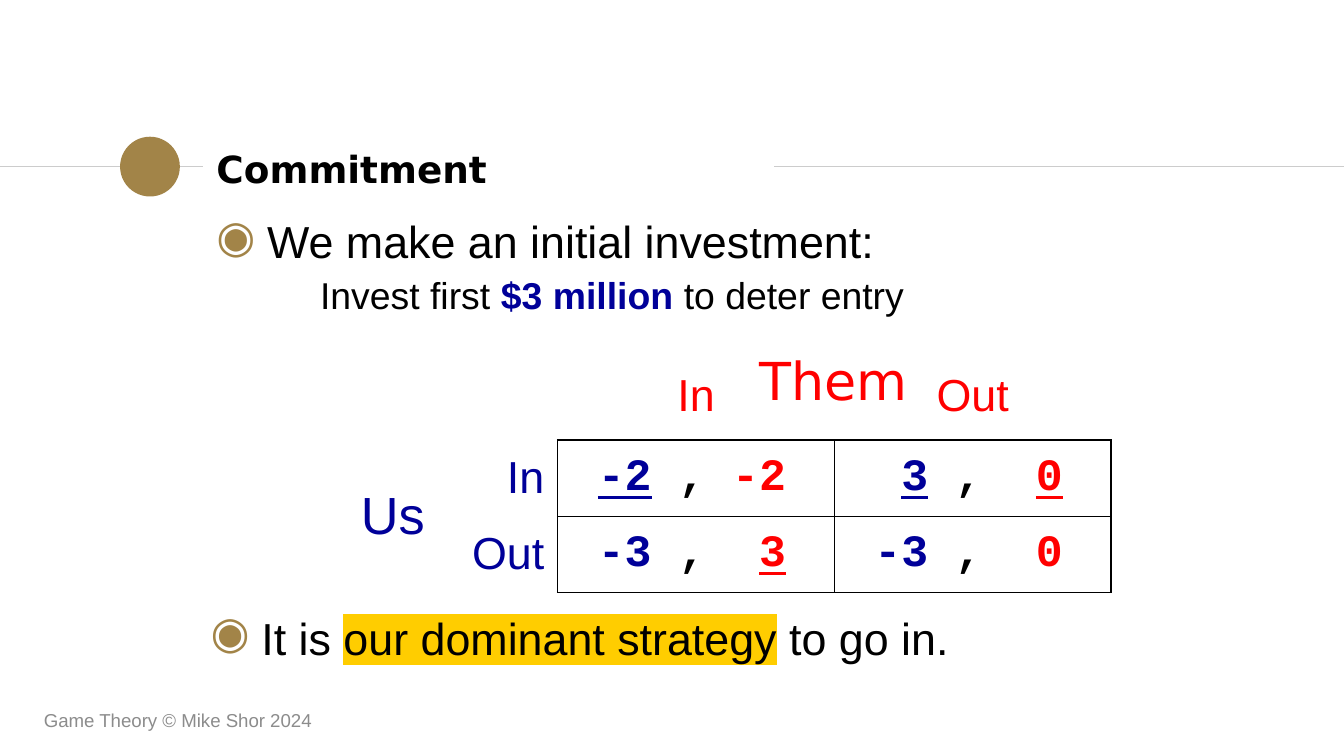
from collections import namedtuple

from lxml.etree import SubElement
from pptx import Presentation
from pptx.dml.color import RGBColor
from pptx.enum.shapes import MSO_CONNECTOR as Connector, MSO_SHAPE as Shape
from pptx.enum.text import MSO_ANCHOR as Anchor, PP_ALIGN as Align
from pptx.oxml.ns import qn
from pptx.util import Cm, Pt

Box = namedtuple("Box", "left top width height")

COLORS = {
    "text": "000000",
    "us": "000099",
    "them": "FF0000",
    "accent": "A28448",
    "rule": "CCCCCC",
    "footer": "8C8C8C",
    "mark": "FFCD00",
}
BODY, HEADING, PAYOFF = "Arial", "DejaVu Sans", "Courier New"


def rgb(name):
    return RGBColor.from_string(COLORS[name])


def add_color(parent, name):
    fill = SubElement(parent, qn("a:solidFill"))
    SubElement(fill, qn("a:srgbClr"), val=COLORS[name])


def add_span(para, text, size, color="text", face=BODY, bold=False, underline=False, mark=None):
    span = para.add_run()
    span.text = text
    font = span.font
    font.size, font.bold, font.underline = Pt(size), bold, underline
    font.color.rgb = rgb(color)
    font.name = face
    if mark:
        props = span._r.get_or_add_rPr()
        highlight = SubElement(props, qn("a:highlight"))
        SubElement(highlight, qn("a:srgbClr"), val=COLORS[mark])
        props.find(qn("a:latin")).addprevious(highlight)


def set_frame(frame, inset_x=0.25, inset_y=0.25, anchor=Anchor.TOP):
    frame.word_wrap = True
    frame.margin_left = frame.margin_right = Cm(inset_x)
    frame.margin_top = frame.margin_bottom = Cm(inset_y)
    frame.vertical_anchor = anchor
    return frame.paragraphs[0]


def add_text(page, box, **frame_options):
    shape = page.shapes.add_textbox(*map(Cm, box))
    return shape.text_frame, set_frame(shape.text_frame, **frame_options)


def set_bullet(para):
    para.line_spacing = 0.9
    props = para._p.get_or_add_pPr()
    props.set("marL", str(Cm(0.96)))
    props.set("indent", str(-Cm(0.96)))
    color = SubElement(props, qn("a:buClr"))
    SubElement(color, qn("a:srgbClr"), val=COLORS["accent"])
    SubElement(props, qn("a:buChar"), char="◉")


def draw_title(page, box):
    middle = box.top + box.height / 2 - 0.03
    diameter = 1.13
    for start, end in ((0, box.left), (box.left + 10.79, 25.4)):
        rule = page.shapes.add_connector(
            Connector.STRAIGHT, Cm(start), Cm(middle), Cm(end), Cm(middle))
        rule.line.color.rgb = rgb("rule")
        rule.line.width = Pt(0.75)
        SubElement(rule._element.spPr, qn("a:effectLst"))
    dot = page.shapes.add_shape(
        Shape.OVAL, Cm(box.left - 1.57), Cm(middle - diameter / 2), Cm(diameter), Cm(diameter))
    dot.shadow.inherit = False
    dot.fill.solid()
    dot.fill.fore_color.rgb = rgb("accent")
    dot.line.fill.background()

    title = page.shapes.title
    title.left, title.top, title.width, title.height = map(Cm, box)
    para = set_frame(title.text_frame, anchor=Anchor.MIDDLE)
    para.alignment = Align.LEFT
    add_span(para, "Commitment", 20, face=HEADING, bold=True)


def draw_investment(page, box):
    frame, para = add_text(page, box)
    set_bullet(para)
    add_span(para, "We make an initial investment:", 24)
    para = frame.add_paragraph()
    para.line_spacing, para.space_before = 0.9, Pt(4.8)
    para._p.get_or_add_pPr().set("marL", str(Cm(1.96)))
    add_span(para, "Invest first ", 20)
    add_span(para, "$3 million ", 20, "us", bold=True)
    add_span(para, "to deter entry", 20)


def draw_conclusion(page, box):
    _, para = add_text(page, box)
    set_bullet(para)
    add_span(para, "It is ", 24)
    add_span(para, "our dominant strategy", 24, mark="mark")
    add_span(para, " to go in.", 24)


def draw_footer(page, box):
    _, para = add_text(page, box, inset_y=0.13, anchor=Anchor.MIDDLE)
    add_span(para, "Game Theory © Mike Shor 2024", 10, "footer")


def set_borders(cell, visible):
    props = cell._tc.get_or_add_tcPr()
    for side in "LRTB":
        line = SubElement(props, qn(f"a:ln{side}"), w=str(Pt(1)))
        if side in visible:
            add_color(line, "text")
        else:
            SubElement(line, qn("a:noFill"))
    cell.fill.background()


def write_label(cell, text, size, color, align, anchor=Anchor.MIDDLE):
    cell.vertical_anchor = anchor
    para = cell.text_frame.paragraphs[0]
    para.alignment = align
    add_span(para, text, size, color)


def write_payoff(cell, ours, theirs, our_best, their_best):
    cell.vertical_anchor = Anchor.MIDDLE
    para = cell.text_frame.paragraphs[0]
    tabs = SubElement(para._p.get_or_add_pPr(), qn("a:tabLst"))
    for place, align in ((1.52, "r"), (2.03, "l"), (4.06, "r")):
        SubElement(tabs, qn("a:tab"), pos=str(Cm(place)), algn=align)
    style = {"face": PAYOFF, "bold": True}
    add_span(para, "\t", 24, **style)
    add_span(para, str(ours), 24, "us", underline=our_best, **style)
    add_span(para, "\t,\t", 24, **style)
    add_span(para, str(theirs), 24, "them", underline=their_best, **style)


def draw_game(page, box):
    _, para = add_text(page, Box(box.left + 6.42, box.top - 0.43, 6.93, 1.45), inset_y=0.13)
    para.alignment = Align.CENTER
    add_span(para, "Them", 28, "them", HEADING)

    grid = page.shapes.add_table(3, 4, *map(Cm, box)).table
    grid.first_row = grid.horz_banding = False
    for column, width in zip(grid.columns, (2.41, 2.26, 5.23, 5.23)):
        column.width = Cm(width)
    for row in grid.rows:
        row.height = Cm(box.height / 3)
    for r in range(3):
        for c in range(4):
            if c > 1:
                visible = "LRTB" if r else "B"
            else:
                visible = "R" if r and c else ""
            set_borders(grid.cell(r, c), visible)

    grid.cell(1, 0).merge(grid.cell(2, 0))
    write_label(grid.cell(1, 0), "Us", 28, "us", Align.RIGHT)
    for i, move in enumerate(("In", "Out")):
        write_label(grid.cell(0, i + 2), move, 24, "them", Align.CENTER, Anchor.TOP)
        write_label(grid.cell(i + 1, 1), move, 24, "us", Align.RIGHT)

    payoffs = [
        [(-2, -2, True, False), (3, 0, True, True)],
        [(-3, 3, False, True), (-3, 0, False, False)],
    ]
    for r, row in enumerate(payoffs, 1):
        for c, payoff in enumerate(row, 2):
            write_payoff(grid.cell(r, c), *payoff)


def main():
    deck = Presentation()
    deck.slide_width, deck.slide_height = Cm(25.4), Cm(14.29)
    page = deck.slides.add_slide(deck.slide_layouts[5])
    draw_title(page, Box(3.84, 2.57, 10.54, 1.22))
    draw_investment(page, Box(3.84, 3.91, 18.92, 3.1))
    draw_footer(page, Box(0.58, 13.23, 8.59, 0.76))
    draw_game(page, Box(5.87, 6.88, 15.13, 4.32))
    draw_conclusion(page, Box(3.73, 11.4, 18.92, 2.36))
    deck.save("out.pptx")


if __name__ == "__main__":
    main()
